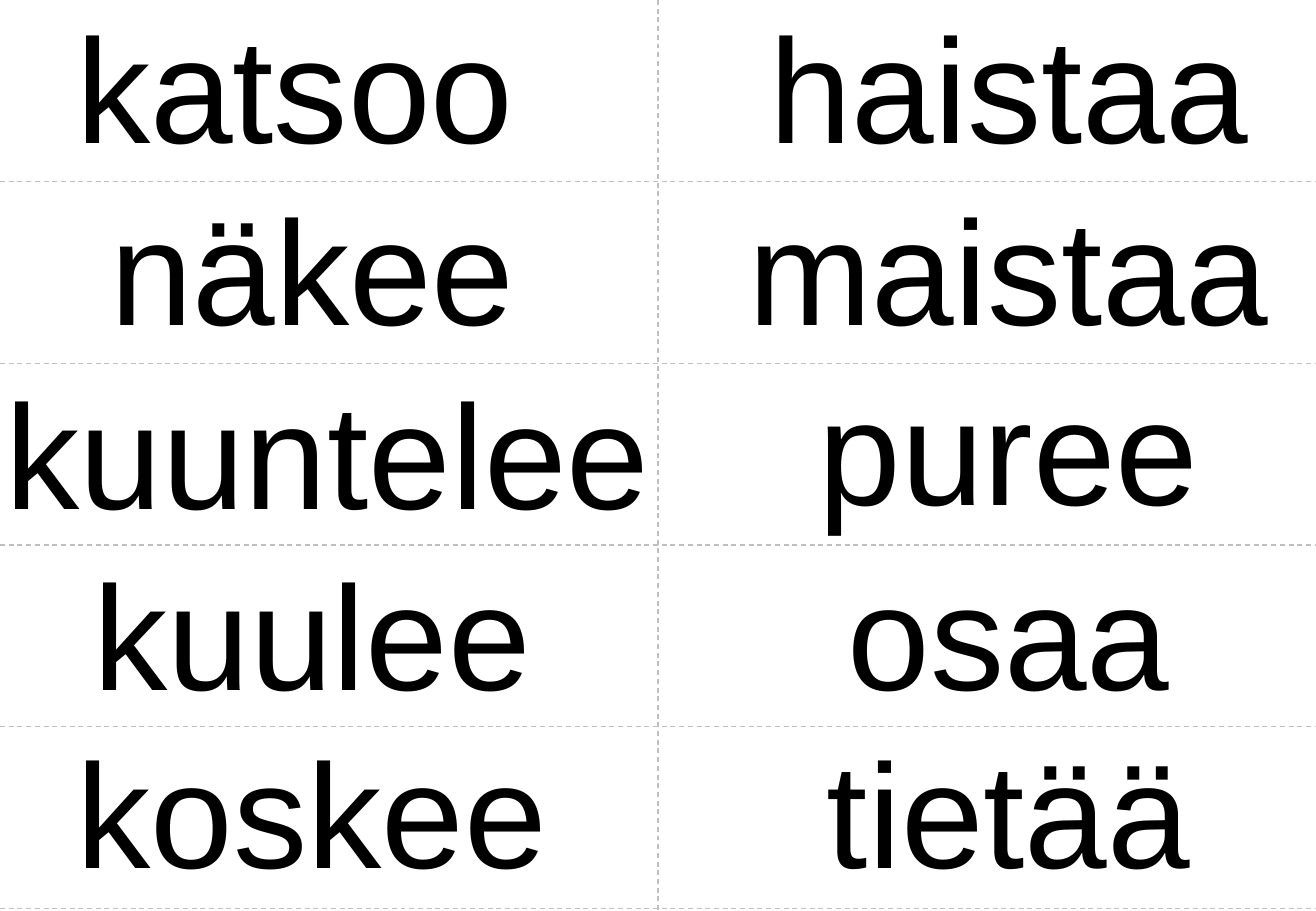
from pptx import Presentation
from pptx.dml.color import RGBColor
from pptx.enum.dml import MSO_LINE
from pptx.enum.shapes import MSO_CONNECTOR
from pptx.enum.text import MSO_AUTO_SIZE, PP_ALIGN
from pptx.oxml.ns import qn
from pptx.util import Inches, Pt
from lxml import etree

DASH = MSO_LINE.DASH
STRAIGHT = MSO_CONNECTOR.STRAIGHT
GROW = MSO_AUTO_SIZE.SHAPE_TO_FIT_TEXT
CENTER = PP_ALIGN.CENTER

WIDTH, HEIGHT = 10.83, 7.5
ROWS, ROW_HEIGHT = 5, 1.496
WORD_HEIGHT = 1.48

LEFT_WORDS = [
    ("katsoo", 0.57, -0.09, 3.71),
    ("näkee", 0.85, 1.41, 3.44),
    ("kuuntelee", -0.01, 2.92, 5.41),
    ("kuulee", 0.71, 4.41, 3.72),
    ("koskee", 0.57, 5.88, 3.99),
]
RIGHT_WORDS = [
    ("haistaa", 6.27, -0.09, 4.06),
    ("maistaa", 6.1, 1.41, 4.39),
    ("puree", 6.68, 2.89, 3.24),
    ("osaa", 6.92, 4.41, 2.76),
    ("tietää", 6.75, 5.88, 3.1),
]


def color(value):
    return RGBColor.from_string(value)


def add_text(p, text, size=88, font="Arial", fill="000000", align=CENTER):
    p.alignment = align
    r = p.add_run()
    r.text = text
    r.font.size = Pt(size)
    r.font.name = font
    r.font.color.rgb = color(fill)


class CardSheet:
    cut_color = "BFBFBF"
    cut_width = 0.75
    inset = 0.05

    def __init__(self, s):
        self.s = s

    def word(self, text, left, top, width):
        sp = self.s.shapes.add_textbox(
            Inches(left), Inches(top), Inches(width), Inches(WORD_HEIGHT))
        tf = sp.text_frame
        tf.word_wrap = False
        tf.auto_size = GROW
        tf.margin_left = tf.margin_right = Inches(self.inset)
        tf.margin_top = tf.margin_bottom = Inches(self.inset)
        add_text(tf.paragraphs[0], text)

    def cut_line(self, x1, y1, x2, y2):
        sp = self.s.shapes.add_connector(
            STRAIGHT, Inches(x1), Inches(y1), Inches(x2), Inches(y2))
        sp.line.color.rgb = color(self.cut_color)
        sp.line.width = Pt(self.cut_width)
        sp.line.dash_style = DASH
        etree.SubElement(sp._element.spPr, qn("a:effectLst"))


def main():
    prs = Presentation()
    prs.slide_width = Inches(WIDTH)
    prs.slide_height = Inches(HEIGHT)
    sheet = CardSheet(prs.slides.add_slide(prs.slide_layouts[6]))

    for card in LEFT_WORDS + RIGHT_WORDS:
        sheet.word(*card)

    sheet.cut_line(WIDTH / 2, 0, WIDTH / 2, HEIGHT)
    for row in range(1, ROWS + 1):
        y = row * ROW_HEIGHT
        sheet.cut_line(0, y, WIDTH, y)

    prs.save("out.pptx")


if __name__ == "__main__":
    main()
